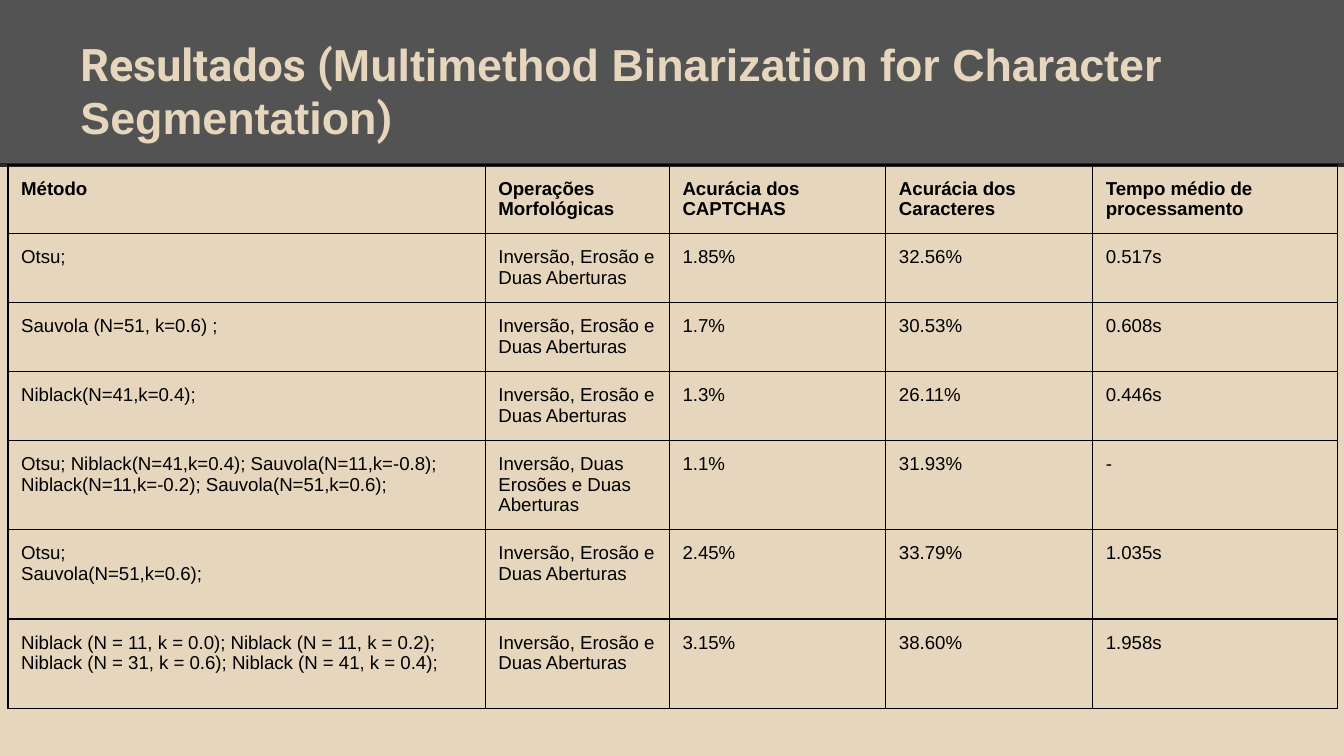
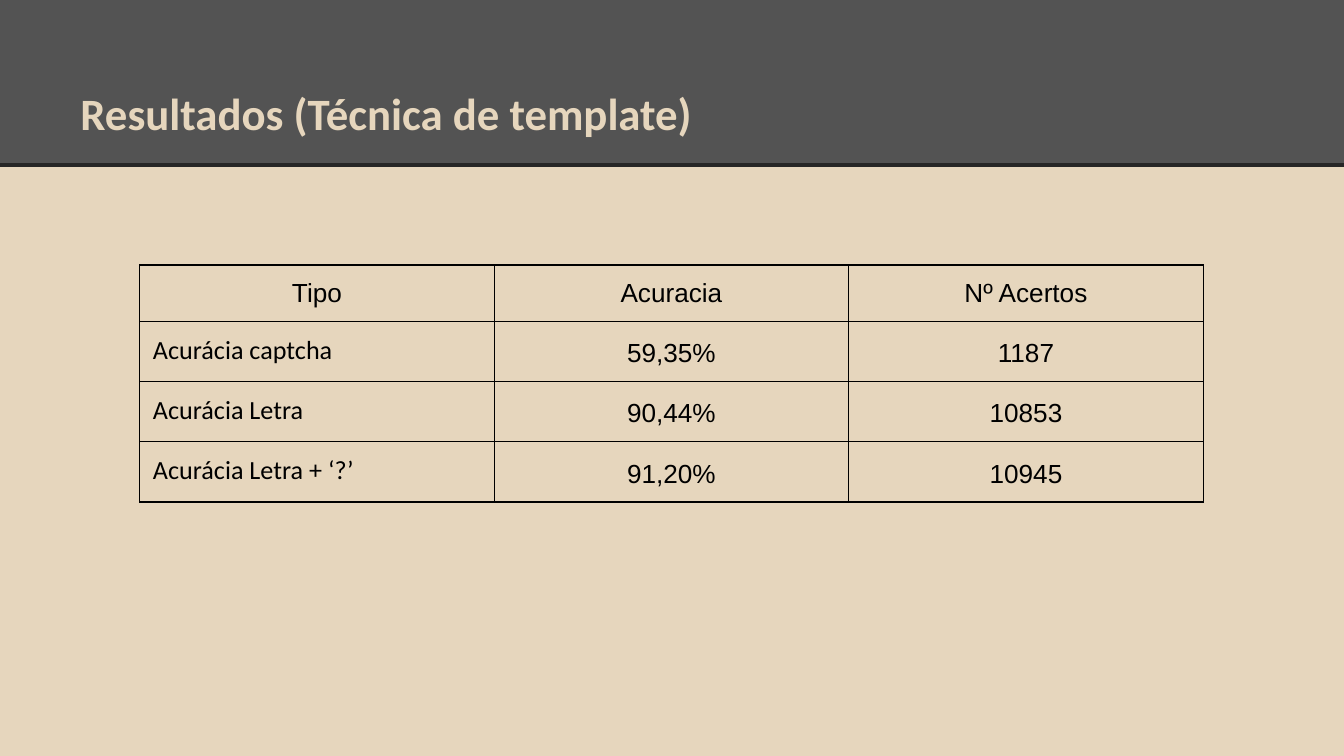
from dataclasses import dataclass

from lxml import etree
from pptx import Presentation
from pptx.dml.color import RGBColor
from pptx.enum import shapes, text
from pptx.oxml import ns
from pptx.util import Cm, Pt


@dataclass(frozen=True)
class Theme:
    sand: str = "E6D6BD"
    band: str = "535353"
    rule: str = "262626"
    ink: str = "000000"
    sans: str = "Arial"
    soft: str = "Calibri"
    head: str = "Roboto"
    title: int = 24
    tail: int = 36
    small: int = 10
    mid: int = 14


T = Theme()
WIDTH, HEIGHT, BAND = 25.4, 14.29, 3.12
PAD = 0.25
SLIM = 0.18

# Title runs: text, font, size
TITLE_A = [
    ("Resultados (", T.head, T.title),
    ("Multimethod Binarization for Character Segmentation", T.sans, T.title),
    (")", T.head, T.title),
]
TITLE_B = [
    ("Resultados (Técnica de template)", T.soft, T.title),
    (" ", T.soft, T.tail),
]

USUAL = "Inversão, Erosão e Duas Aberturas"
METHODS = [
    ("Método", "Operações Morfológicas", "Acurácia dos CAPTCHAS",
     "Acurácia dos Caracteres", "Tempo médio de processamento"),
    ("Otsu;", USUAL, "1.85%", "32.56%", "0.517s"),
    ("Sauvola (N=51, k=0.6) ;", USUAL, "1.7%", "30.53%", "0.608s"),
    ("Niblack(N=41,k=0.4);", USUAL, "1.3%", "26.11%", "0.446s"),
    ("Otsu; Niblack(N=41,k=0.4); Sauvola(N=11,k=-0.8); "
     "Niblack(N=11,k=-0.2); Sauvola(N=51,k=0.6);",
     "Inversão, Duas Erosões e Duas Aberturas", "1.1%", "31.93%", "-"),
    ("Otsu;\nSauvola(N=51,k=0.6);", USUAL, "2.45%", "33.79%", "1.035s"),
    ("Niblack (N = 11, k = 0.0); Niblack (N = 11, k = 0.2); "
     "Niblack (N = 31, k = 0.6); Niblack (N = 41, k = 0.4);",
     USUAL, "3.15%", "38.60%", "1.958s"),
]
SCORES = [
    ("Tipo", "Acuracia", "Nº Acertos"),
    ("Acurácia captcha", "59,35%", "1187"),
    ("Acurácia Letra", "90,44%", "10853"),
    ("Acurácia Letra + ‘?’", "91,20%", "10945"),
]


def color(code):
    return RGBColor.from_string(code)


def add_run(para, words, font, size, ink, bold=False):
    run = para.add_run()
    run.text = words
    run.font.name, run.font.size, run.font.bold = font, Pt(size), bold
    run.font.color.rgb = color(ink)


def add_title(slide, runs):
    frame = slide.shapes.title.text_frame
    frame.auto_size = text.MSO_AUTO_SIZE.NONE
    para = frame.paragraphs[0]
    para.alignment = text.PP_ALIGN.LEFT
    for words, font, size in runs:
        add_run(para, words, font, size, T.sand, True)


def dress_master(master, layout, slide):
    """Give the master its background and band, the layout its title place."""
    master.background.fill.solid()
    master.background.fill.fore_color.rgb = color(T.sand)

    band = slide.shapes.add_shape(
        shapes.MSO_SHAPE.RECTANGLE, 0, 0, Cm(WIDTH), Cm(BAND))
    band.shadow.inherit = False
    band.fill.solid()
    band.fill.fore_color.rgb = color(T.band)
    band.line.fill.background()

    rule = slide.shapes.add_connector(
        shapes.MSO_CONNECTOR.STRAIGHT, 0, Cm(BAND), Cm(WIDTH), Cm(BAND))
    rule.line.color.rgb = color(T.rule)
    rule.line.width = Pt(2.25)
    etree.SubElement(rule.element.spPr, ns.qn("a:effectLst"))

    # Shapes are made on a slide, then moved behind the master's own parts.
    for spot, part in enumerate((band, rule), 2):
        master.shapes.element.insert(spot, part.element)

    title = layout.placeholders[0]
    title.left, title.top = Cm(1.27), Cm(0.58)
    title.width, title.height = Cm(22.86), Cm(2.39)
    frame = title.text_frame
    frame.vertical_anchor = text.MSO_ANCHOR.BOTTOM
    frame.margin_left = frame.margin_right = Cm(PAD)
    frame.margin_top = frame.margin_bottom = Cm(PAD)


def add_edges(cell):
    props = cell._tc.get_or_add_tcPr()
    for spot, side in enumerate("LRTB"):
        edge = etree.Element(ns.qn("a:ln" + side), w=str(Pt(0.75)))
        fill = etree.SubElement(edge, ns.qn("a:solidFill"))
        etree.SubElement(fill, ns.qn("a:srgbClr"), val=T.ink)
        props.insert(spot, edge)


def add_grid(slide, data, left, top, cols, rows, style):
    """Draw a table; style(row, col) gives font, size, bold, align, pad, lead."""
    table = slide.shapes.add_table(
        len(rows), len(cols), Cm(left), Cm(top),
        Cm(sum(cols)), Cm(sum(rows))).table
    table.first_row = table.horz_banding = False
    for col, wide in zip(table.columns, cols):
        col.width = Cm(wide)
    for row, tall in zip(table.rows, rows):
        row.height = Cm(tall)
    for r, line in enumerate(data):
        for c, words in enumerate(line):
            font, size, bold, align, pad, lead = style(r, c)
            cell = table.cell(r, c)
            cell.fill.background()
            add_edges(cell)
            cell.margin_left = cell.margin_right = Cm(pad)
            cell.margin_top = cell.margin_bottom = Cm(PAD)
            frame = cell.text_frame
            for n, part in enumerate(words.split("\n")):
                para = frame.add_paragraph() if n else frame.paragraphs[0]
                para.alignment, para.line_spacing = align, lead
                add_run(para, part, font, size, T.ink, bold)


def method_style(row, col):
    return T.sans, T.small, row == 0, text.PP_ALIGN.LEFT, PAD, None


def score_style(row, col):
    if row == 0:
        return T.sans, T.mid, False, text.PP_ALIGN.CENTER, PAD, None
    if col == 0:
        return T.soft, T.mid, False, text.PP_ALIGN.LEFT, PAD, None
    return T.sans, T.mid, False, text.PP_ALIGN.CENTER, SLIM, 1.15


def main():
    prs = Presentation()
    prs.slide_width, prs.slide_height = Cm(WIDTH), Cm(HEIGHT)
    layout = prs.slide_layouts[5]

    first = prs.slides.add_slide(layout)
    dress_master(prs.slide_master, layout, first)
    add_title(first, TITLE_A)
    add_grid(first, METHODS, 0.15, BAND, [9.02, 3.48, 4.09, 3.91, 4.62],
             [1.3] * 4 + [1.69] * 3, method_style)

    second = prs.slides.add_slide(layout)
    add_title(second, TITLE_B)
    add_grid(second, SCORES, 2.64, 5.01, [6.7] * 3,
             [1.06] + [1.14] * 3, score_style)

    prs.save("out.pptx")


if __name__ == "__main__":
    main()
